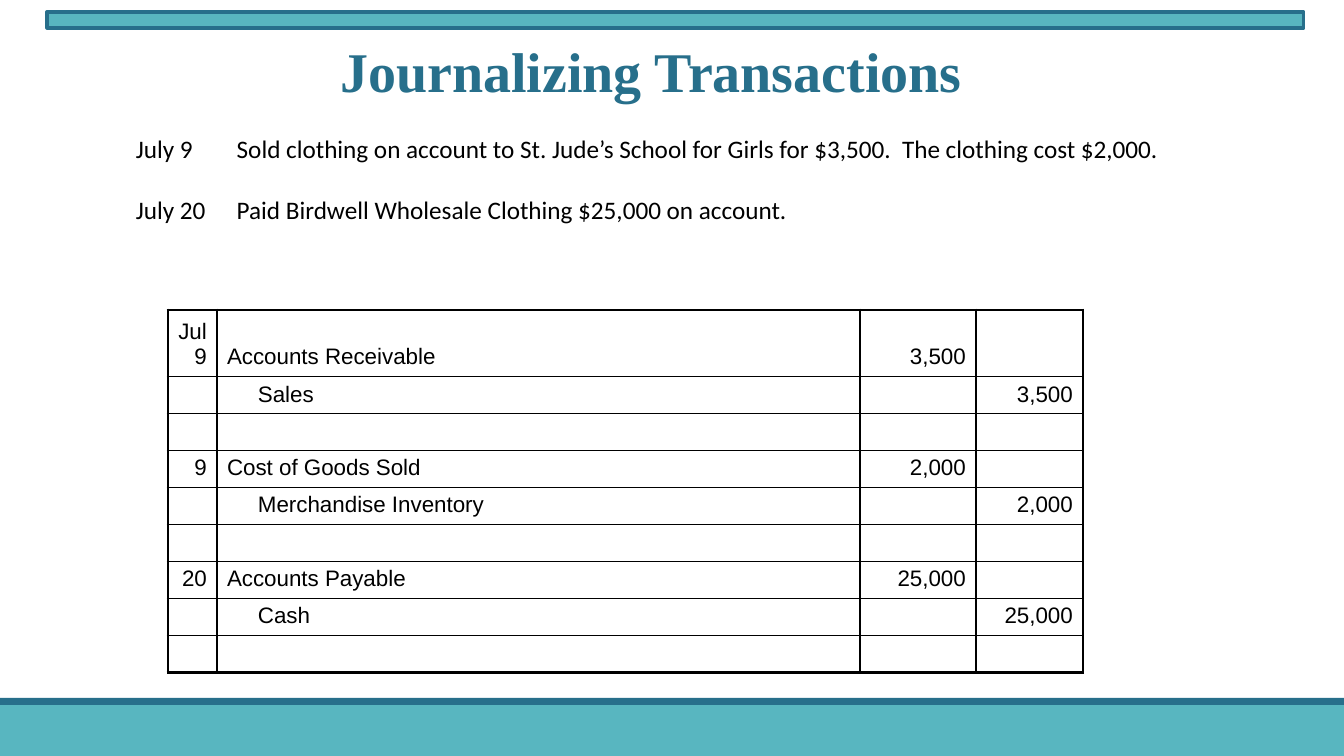
import pptx
import pptx.dml.color
import pptx.enum.shapes
import pptx.enum.text
import pptx.oxml.ns
import pptx.util
from lxml import etree

# Content
TITLE = "Journalizing Transactions"
TRANSACTIONS = [
    "July 9 \tSold clothing on account to St. Jude’s School for Girls for $3,500.  The clothing cost $2,000.",
    "July 20 \tPaid Birdwell Wholesale Clothing $25,000 on account.",
]
JOURNAL = [  # date, account, debit, credit
    ("Jul\v9", "Accounts Receivable", "3,500", ""),
    ("", "Sales", "", "3,500"),
    ("", "", "", ""),
    ("9", "Cost of Goods Sold", "2,000", ""),
    ("", "Merchandise Inventory", "", "2,000"),
    ("", "", "", ""),
    ("20", "Accounts Payable", "25,000", ""),
    ("", "Cash", "", "25,000"),
    ("", "", "", ""),
]
TEAL, BLUE, BLACK = "58B6C0", "276F8B", "000000"
BARS = [  # left, top, width, height, fill, outline
    (0, 705, 1344, 51, TEAL, None),
    (0, 698, 1344, 7, BLUE, None),
    (47, 12, 1257, 16, TEAL, BLUE),
]
COLUMNS = [49, 643, 116, 107]
FIRST_ROW, ROW = 64, 37
CREDIT_INDENT = 31
ALIGN = pptx.enum.text.PP_ALIGN


def px(n):
    return pptx.util.Emu(round(n * 914400 / 100.8))


def rgb(color):
    return pptx.dml.color.RGBColor.from_string(color)


def set_font(p, name, size, color, bold=False):
    p.font.name, p.font.size, p.font.bold = name, pptx.util.Pt(size), bold
    p.font.color.rgb = rgb(color)


def add_border(cell, side, points):
    qn = pptx.oxml.ns.qn
    tc_pr = cell._tc.get_or_add_tcPr()
    ln = etree.SubElement(tc_pr, qn("a:ln" + side), w=str(pptx.util.Pt(points)))
    fill = etree.SubElement(ln, qn("a:solidFill"))
    etree.SubElement(fill, qn("a:srgbClr"), val=BLACK)


prs = pptx.Presentation()
prs.slide_width, prs.slide_height = px(1344), px(756)
s = prs.slides.add_slide(prs.slide_layouts[6])

# Bars at top and bottom
for left, top, width, height, fill, outline in BARS:
    sp = s.shapes.add_shape(pptx.enum.shapes.MSO_SHAPE.RECTANGLE,
                            px(left), px(top), px(width), px(height))
    sp.shadow.inherit = False
    sp.fill.solid()
    sp.fill.fore_color.rgb = rgb(fill)
    if outline:
        sp.line.color.rgb = rgb(outline)
        sp.line.width = pptx.util.Pt(2.25)
    else:
        sp.line.fill.background()

# Title
tf = s.shapes.add_textbox(px(327), px(32), px(648), px(78)).text_frame
p = tf.paragraphs[0]
p.text, p.alignment = TITLE, ALIGN.CENTER
set_font(p, "Times New Roman", 40, BLUE, bold=True)

# Transactions
tf = s.shapes.add_textbox(px(126), px(128), px(1218), px(102)).text_frame
tf.word_wrap = True
for i, transaction in enumerate(TRANSACTIONS):
    p = tf.add_paragraph() if i else tf.paragraphs[0]
    p.text = transaction
    p.space_before = pptx.util.Pt(22 if i else 0)
    set_font(p, "Calibri", 18, BLACK)

# Journal table
last_row, last_col = len(JOURNAL) - 1, len(COLUMNS) - 1
table = s.shapes.add_table(len(JOURNAL), len(COLUMNS), px(168), px(310),
                           px(sum(COLUMNS)), px(FIRST_ROW + ROW * last_row)).table
table.first_row = table.horz_banding = False
for column, width in zip(table.columns, COLUMNS):
    column.width = px(width)
for r, entry in enumerate(JOURNAL):
    table.rows[r].height = px(ROW if r else FIRST_ROW)
    for c, text in enumerate(entry):
        cell = table.cell(r, c)
        for side, outer in (("L", c == 0), ("R", c == last_col),
                            ("T", r == 0), ("B", r == last_row)):
            add_border(cell, side, 2.25 if outer else 1)
        cell.fill.background()
        if r == 0:
            cell.vertical_anchor = pptx.enum.text.MSO_ANCHOR.BOTTOM
            cell.margin_bottom = px(8)
        if c == 1 and entry[3]:
            cell.margin_left = px(10 + CREDIT_INDENT)
        p = cell.text_frame.paragraphs[0]
        p.text = text
        p.alignment = ALIGN.LEFT if c == 1 else ALIGN.RIGHT
        set_font(p, "Arial", 16, BLACK)

prs.save("out.pptx")
